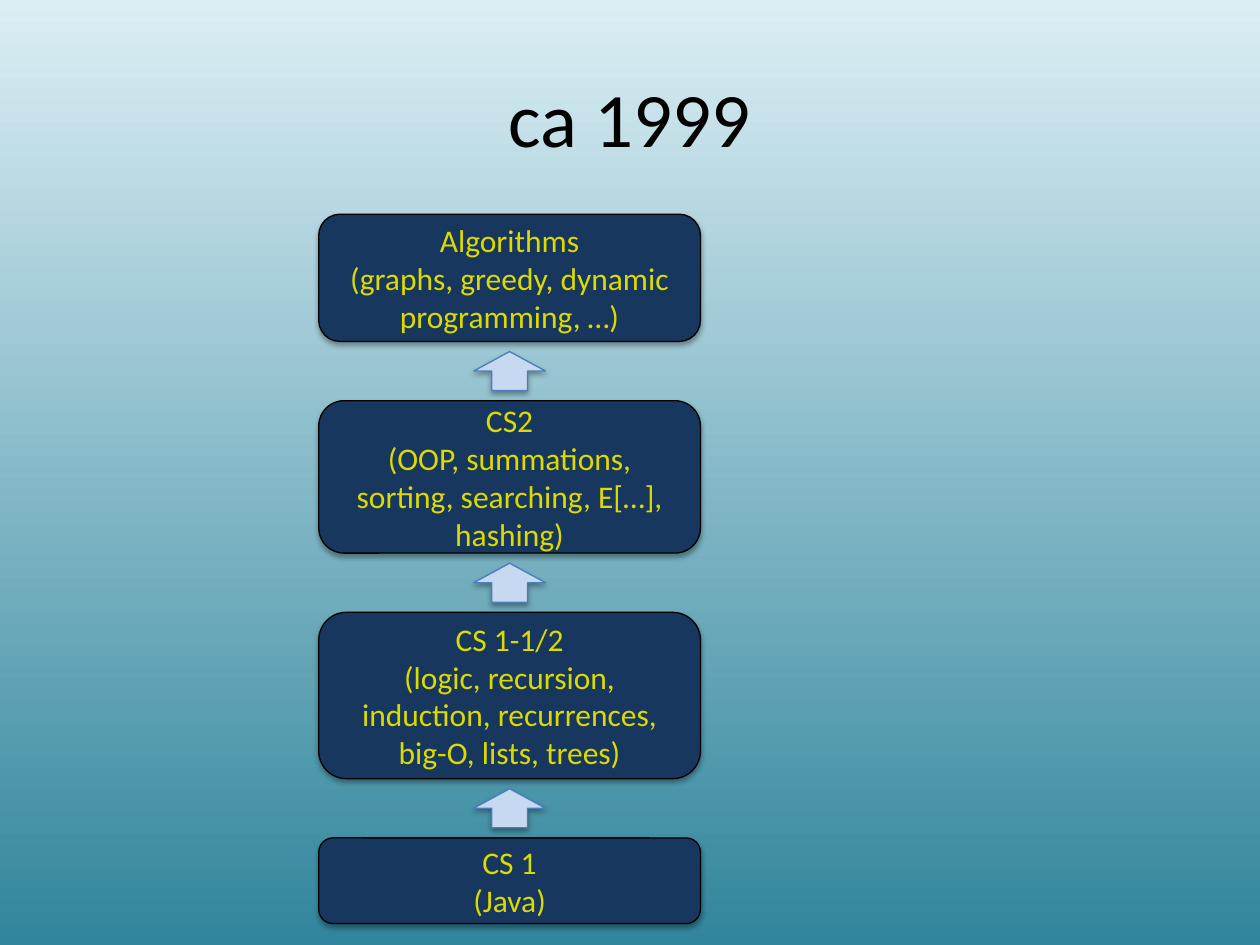
from lxml import etree
from pptx import Presentation
from pptx.dml.color import RGBColor
from pptx.enum.shapes import MSO_SHAPE
from pptx.enum.text import MSO_ANCHOR, PP_ALIGN
from pptx.oxml.ns import qn
from pptx.util import Inches, Pt

ROUND, ARROW = MSO_SHAPE.ROUNDED_RECTANGLE, MSO_SHAPE.UP_ARROW
MIDDLE, CENTER = MSO_ANCHOR.MIDDLE, PP_ALIGN.CENTER
FONT = "Calibri"
COLORS = {
    "sky": "DBEEF4", "sea": "31859C", "black": "000000", "navy": "17375E",
    "yellow": "DBDB00", "pale": "C6D9F1", "blue": "4B7EBC",
}
# Height in inches, course, topics; from top to bottom
COURSES = [
    (1.01, "Algorithms", "(graphs, greedy, dynamic programming, …)"),
    (1.21, "CS2", "(OOP, summations, sorting, searching, E[…], hashing)"),
    (1.32, "CS 1-1/2",
     "(logic, recursion, induction, recurrences, big-O, lists, trees)"),
    (0.68, "CS 1", "(Java)"),
]
GAP = 0.47
ARROW_W, ARROW_H = 0.57, 0.31


def color(name):
    return RGBColor.from_string(COLORS[name])


def paint_back(slide):
    fill = slide.background.fill
    fill.gradient()
    fill.gradient_angle = 270
    for stop, name, pos in zip(fill.gradient_stops, ("sky", "sea"), (0, 1)):
        stop.color.rgb = color(name)
        stop.position = pos


def write(frame, lines, size, ink):
    frame.word_wrap = True
    frame.vertical_anchor = MIDDLE
    for i, line in enumerate(lines):
        para = frame.add_paragraph() if i else frame.paragraphs[0]
        para.alignment = CENTER
        run = para.add_run()
        run.text = line
        run.font.name = FONT
        run.font.size = Pt(size)
        run.font.color.rgb = color(ink)


def add_shadow(shape):
    shape.shadow.inherit = False
    effects = shape._element.spPr.find(qn("a:effectLst"))
    outer = etree.SubElement(
        effects, qn("a:outerShdw"), blurRad=str(Pt(3.1)), dist=str(Pt(1.8)),
        dir="5400000", rotWithShape="0")
    tint = etree.SubElement(outer, qn("a:srgbClr"), val=COLORS["black"])
    etree.SubElement(tint, qn("a:alpha"), val="35000")


def add_block(slide, kind, box, fill, line):
    shape = slide.shapes.add_shape(kind, *map(Inches, box))
    shape.fill.solid()
    shape.fill.fore_color.rgb = color(fill)
    shape.line.color.rgb = color(line)
    shape.line.width = Pt(0.75)
    add_shadow(shape)
    return shape


def add_title(slide, box, text):
    title = slide.shapes.add_textbox(*map(Inches, box))
    write(title.text_frame, [text], 44, "black")


def add_stack(slide, left, top, width):
    """Stack the courses, with an arrow up in each gap."""
    for i, (height, *lines) in enumerate(COURSES):
        if i:
            box = (left + (width - ARROW_W) / 2,
                   top - (GAP + ARROW_H) / 2, ARROW_W, ARROW_H)
            add_block(slide, ARROW, box, "pale", "blue")
        course = add_block(slide, ROUND, (left, top, width, height),
                           "navy", "black")
        write(course.text_frame, lines, 18, "yellow")
        top += height + GAP


def main():
    deck = Presentation()
    deck.slide_width, deck.slide_height = Inches(10), Inches(7.5)
    slide = deck.slides.add_slide(deck.slide_layouts[6])
    paint_back(slide)
    add_title(slide, (0.5, 0.3, 9, 1.25), "ca 1999")
    add_stack(slide, 2.53, 1.7, 3.03)
    deck.save("out.pptx")


if __name__ == "__main__":
    main()
